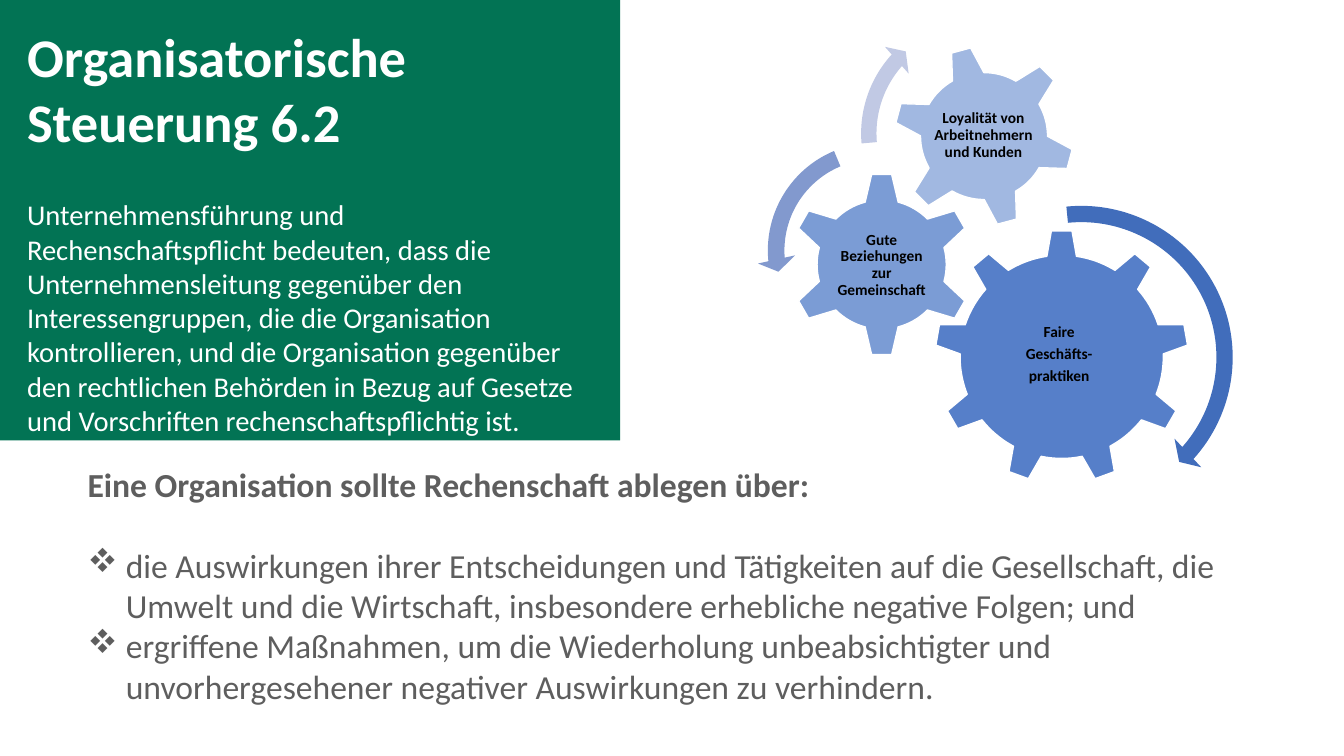
from lxml.etree import SubElement
from pptx import Presentation
from pptx.dml.color import RGBColor
from pptx.enum.shapes import MSO_SHAPE
from pptx.enum.text import MSO_ANCHOR, PP_ALIGN
from pptx.oxml.ns import qn
from pptx.util import Inches, Pt

GREEN, WHITE, GREY, BLACK, BLUE = "027354", "FFFFFF", "5E5E5E", "000000", "4472C4"
WINGDINGS_DIAMOND = "v"

INTRO = (
    "Unternehmensführung und Rechenschaftspflicht bedeuten, dass die "
    "Unternehmensleitung gegenüber den Interessengruppen, die die Organisation "
    "kontrollieren, und die Organisation gegenüber den rechtlichen Behörden in "
    "Bezug auf Gesetze und Vorschriften rechenschaftspflichtig ist."
)
DUTIES = [
    "die Auswirkungen ihrer Entscheidungen und Tätigkeiten auf die Gesellschaft, "
    "die Umwelt und die Wirtschaft, insbesondere erhebliche negative Folgen; und",
    "ergriffene Maßnahmen, um die Wiederholung unbeabsichtigter und "
    "unvorhergesehener negativer Auswirkungen zu verhindern.",
]
GEARS = [
    (MSO_SHAPE.GEAR_9, (9.27, 2.28, 2.52), 90, 0,
     (9.75, 2.87, 1.51, 1.3), ["Faire", "Geschäfts-", "praktiken"]),
    (MSO_SHAPE.GEAR_6, (7.83, 1.71, 1.83), 70, 0,
     (8.24, 2.18, 1.01, 0.9), ["Gute Beziehungen zur Gemeinschaft"]),
    (MSO_SHAPE.GEAR_6, (8.86, 0.45, 1.8), 50, 345,
     (9.2, 0.84, 1.11, 1.01), ["Loyalität von Arbeitnehmern und Kunden"]),
]
ARROWS = [
    (MSO_SHAPE.CIRCULAR_ARROW, (9.11, 1.93, 3.23), "416DBB",
     (0.05, 2.99, 25.16, 158.61, 0.06)),
    (MSO_SHAPE.LEFT_CIRCULAR_ARROW, (7.51, 1.31, 2.35), "8299CE",
     (0.07, 4.3, 104.89, 148.38, 0.08)),
    (MSO_SHAPE.CIRCULAR_ARROW, (8.44, 0.06, 2.53), "C1C9E4",
     (0.06, 3.94, 133.14, 105.08, 0.07)),
]


def color(value):
    """Turn a hex string into a colour."""
    return RGBColor.from_string(value)


def add_filled_shape(slide, preset, left, top, width, height, fill):
    """Add a preset shape with a plain fill and no outline."""
    shape = slide.shapes.add_shape(
        preset, Inches(left), Inches(top), Inches(width), Inches(height))
    shape.shadow.inherit = False
    shape.fill.solid()
    shape.fill.fore_color.rgb = color(fill)
    shape.line.fill.background()
    return shape


def add_gear(slide, preset, place, opacity, rotation):
    """Add a translucent gear with a white outline."""
    left, top, side = place
    gear = add_filled_shape(slide, preset, left, top, side, side, BLUE)
    gear.rotation = rotation
    gear.line.color.rgb = color(WHITE)
    gear.line.width = Pt(1)
    fill_color = gear.element.spPr.find(qn("a:solidFill"))[0]
    SubElement(fill_color, qn("a:alpha"), val=str(opacity * 1000))


def add_curved_arrow(slide, preset, place, fill, adjustments):
    """Add a circular arrow with its sweep and head proportions."""
    left, top, side = place
    arrow = add_filled_shape(slide, preset, left, top, side, side, fill)
    for index, value in enumerate(adjustments):
        arrow.adjustments[index] = value


def add_text_box(slide, left, top, width, height, inset=None, anchor=MSO_ANCHOR.TOP):
    """Add a wrapping text box and return its text frame."""
    box = slide.shapes.add_textbox(
        Inches(left), Inches(top), Inches(width), Inches(height))
    frame = box.text_frame
    frame.word_wrap = True
    frame.vertical_anchor = anchor
    if inset is not None:
        frame.margin_left = frame.margin_right = Inches(inset)
        frame.margin_top = frame.margin_bottom = Inches(inset)
    return frame


def write(frame, text, size, fill, bold=False, align=PP_ALIGN.LEFT,
          before=0, after=0, spacing=1.0, bullet=None):
    """Write one formatted paragraph into a text frame."""
    first = frame.paragraphs[0]
    paragraph = frame.add_paragraph() if first.runs else first
    paragraph.alignment = align
    paragraph.line_spacing = spacing
    paragraph.space_before = Pt(before)
    paragraph.space_after = Pt(after)
    if bullet:
        properties = paragraph._p.get_or_add_pPr()
        properties.set("marL", str(Inches(0.38)))
        properties.set("indent", str(-Inches(0.38)))
        SubElement(properties, qn("a:buFont"), typeface="Wingdings", charset="2")
        SubElement(properties, qn("a:buChar"), char=bullet)
    run = paragraph.add_run()
    run.text = text
    run.font.name = "Calibri"
    run.font.size = Pt(size)
    run.font.bold = bold
    run.font.color.rgb = color(fill)


def main():
    """Build the slide and save it."""
    presentation = Presentation()
    presentation.slide_width = Inches(13.33)
    presentation.slide_height = Inches(7.5)
    slide = presentation.slides.add_slide(presentation.slide_layouts[6])

    add_filled_shape(slide, MSO_SHAPE.RECTANGLE, 0, 0, 6.15, 4.37, GREEN)
    intro = add_text_box(slide, 0.17, 0.18, 5.63, 4.11)
    write(intro, "Organisatorische Steuerung 6.2", 38.9, WHITE, bold=True)
    write(intro, INTRO, 20.4, WHITE, before=31)

    duties = add_text_box(slide, 0.77, 4.55, 12.4, 1.82)
    write(duties, "Eine Organisation sollte Rechenschaft ablegen über:", 24, GREY,
          bold=True)
    for index, duty in enumerate(DUTIES):
        write(duties, duty, 24, GREY, before=0 if index else 29,
              bullet=WINGDINGS_DIAMOND)

    for preset, place, opacity, rotation, label_place, lines in GEARS:
        add_gear(slide, preset, place, opacity, rotation)
        label = add_text_box(slide, *label_place, inset=0.02, anchor=MSO_ANCHOR.MIDDLE)
        for line in lines:
            write(label, line, 11, BLACK, bold=True, align=PP_ALIGN.CENTER,
                  after=3.85, spacing=0.9)

    for preset, place, fill, adjustments in ARROWS:
        add_curved_arrow(slide, preset, place, fill, adjustments)

    presentation.save("out.pptx")


if __name__ == "__main__":
    main()
